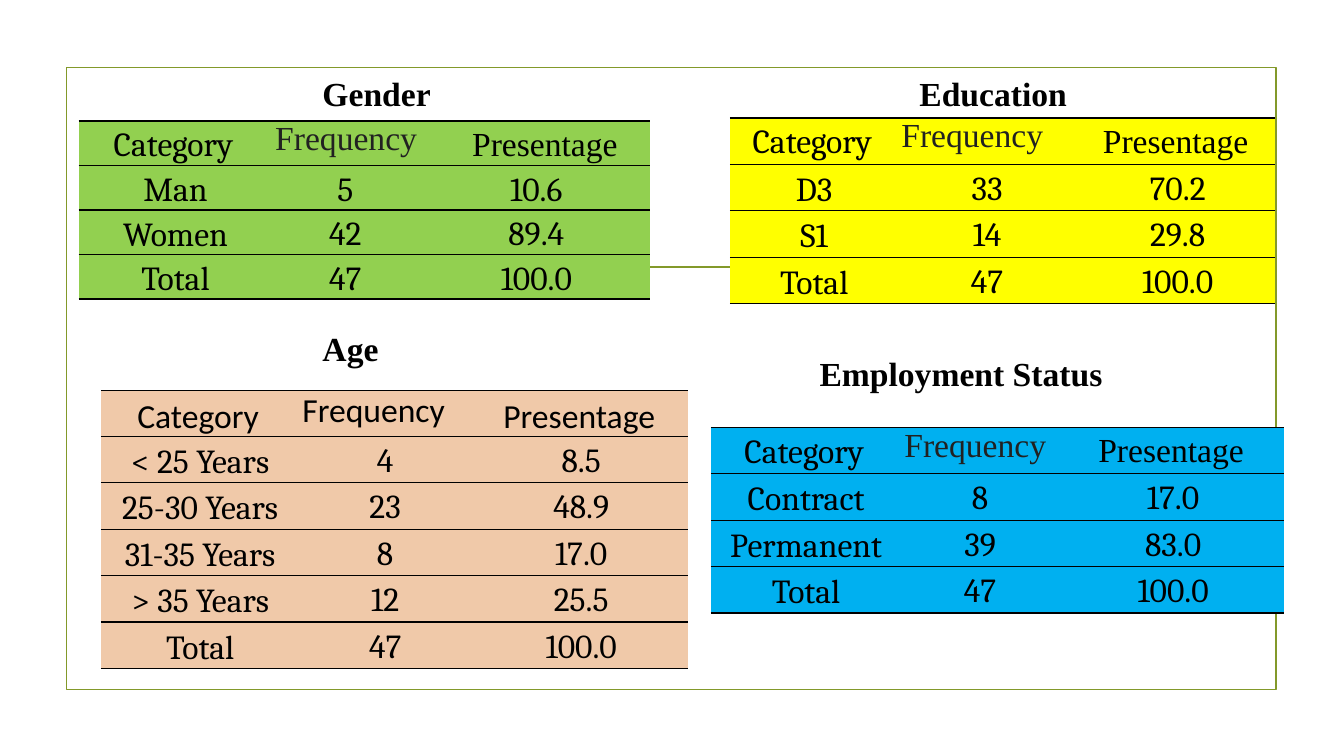
"""Build the slide of four respondent frequency tables."""
from dataclasses import dataclass

from lxml import etree
from pptx import Presentation
from pptx.dml.color import RGBColor
from pptx.enum.shapes import MSO_CONNECTOR, MSO_SHAPE
from pptx.enum.text import MSO_ANCHOR, MSO_AUTO_SIZE, PP_ALIGN
from pptx.oxml.ns import qn
from pptx.util import Pt

PX = 9144
RECT, STRAIGHT = MSO_SHAPE.RECTANGLE, MSO_CONNECTOR.STRAIGHT
CENTER, LEFT = PP_ALIGN.CENTER, PP_ALIGN.LEFT
TOP, MIDDLE = MSO_ANCHOR.TOP, MSO_ANCHOR.MIDDLE
GROW = MSO_AUTO_SIZE.SHAPE_TO_FIT_TEXT
NO_GRID_STYLE = "{2D5ABB26-0587-4C30-8999-92F81FD0307C}"
COLORS = {
    "frame": "83992A", "text": "000000", "soft": "212121",
    "green": "92D050", "yellow": "FFFF00", "peach": "F0C9A9", "blue": "00B0F0",
}
SERIF, SANS, TIMES = "Cambria", "Calibri", "Times New Roman"
HEADER = ("Category", "Frequency", "Presentage")
MIXED_HEAD = ((SERIF, "text"), (TIMES, "soft"), (TIMES, "text"))
PLAIN_HEAD = ((SANS, "text"),) * 3


@dataclass(frozen=True)
class Title:
    text: str
    x: int
    y: int
    w: int


@dataclass(frozen=True)
class FrequencyTable:
    title: Title
    x: int
    y: int
    cols: tuple[int, ...]
    heights: tuple[int, ...]
    fill: str
    rows: tuple[tuple[str, str, str], ...]
    head: tuple[tuple[str, str], ...] = MIXED_HEAD
    head_starts: tuple[int, ...] = (0, 1, 2)


TABLES = (
    FrequencyTable(
        Title("Gender", 310, 67, 128), 78, 120, (188, 149, 21, 209), (44,) * 4, "green",
        (("Man", "5", "10.6"), ("Women", "42", "89.4"), ("Total", "47", "100.0")),
        head_starts=(0, 1, 3)),
    FrequencyTable(
        Title("Age", 310, 320, 128), 100, 387, (193, 174, 215), (46,) + (44,) * 5, "peach",
        (("< 25 Years", "4", "8.5"), ("25-30 Years", "23", "48.9"),
         ("31-35 Years", "8", "17.0"), ("> 35 Years", "12", "25.5"),
         ("Total", "47", "100.0")), head=PLAIN_HEAD),
    FrequencyTable(
        Title("Education", 902, 67, 182), 724, 117, (163, 180, 198), (44,) * 4, "yellow",
        (("D3", "33", "70.2"), ("S1", "14", "29.8"), ("Total", "47", "100.0"))),
    FrequencyTable(
        Title("Employment Status", 803, 345, 353), 705, 424, (185, 160, 223), (46,) * 4, "blue",
        (("Contract", "8", "17.0"), ("Permanent", "39", "83.0"),
         ("Total", "47", "100.0"))),
)


def rgb(name: str) -> RGBColor:
    return RGBColor.from_string(COLORS[name])


def write(p, text: str, font: str, color: str = "text", bold: bool = False) -> None:
    r = p.add_run()
    r.text = text
    for key, value in {"name": font, "size": Pt(24), "bold": bold}.items():
        setattr(r.font, key, value)
    r.font.color.rgb = rgb(color)


def style_cell(cell, fill: str) -> None:
    margins = {"margin_left": 7 * PX, "margin_right": 7 * PX,
               "margin_top": 0, "margin_bottom": 0}
    for key, value in margins.items():
        setattr(cell, key, value)
    cell.fill.solid()
    cell.fill.fore_color.rgb = rgb(fill)
    tc_pr = cell._tc.get_or_add_tcPr()
    for i, side in enumerate(("a:lnT", "a:lnB")):
        ln = etree.Element(qn(side), w=str(Pt(1)))
        solid = etree.SubElement(ln, qn("a:solidFill"))
        etree.SubElement(solid, qn("a:srgbClr"), val=COLORS["text"])
        tc_pr.insert(i, ln)


def fill_row(table, row: int, values: tuple[str, ...], spec: FrequencyTable) -> None:
    is_head = row == 0
    starts = spec.head_starts if is_head else (0, 1, 2)
    ends = [nxt - 1 for nxt in starts[1:]] + [len(spec.cols) - 1]
    fonts = spec.head if is_head else ((SERIF, "text"),) * 3
    for i, (start, end) in enumerate(zip(starts, ends)):
        cell = table.cell(row, start)
        if end > start:
            cell.merge(table.cell(row, end))
        cell.vertical_anchor = MIDDLE if i == 0 and not is_head else TOP
        p = cell.text_frame.paragraphs[0]
        is_loose = is_head and i == 1
        p.alignment = LEFT if is_loose else CENTER
        p.line_spacing = 1.0 if is_loose else 1.15
        if not is_head:
            p._p.get_or_add_pPr().set("marL", str(4 * PX))
        write(p, values[i], *fonts[i])


def add_frequency_table(s, spec: FrequencyTable) -> None:
    rows = (HEADER,) + spec.rows
    sp = s.shapes.add_table(len(rows), len(spec.cols), spec.x * PX, spec.y * PX,
                            sum(spec.cols) * PX, sum(spec.heights) * PX)
    table = sp.table
    table.first_row = table.horz_banding = False
    table._tbl.tblPr.find(qn("a:tableStyleId")).text = NO_GRID_STYLE
    for col, width in zip(table.columns, spec.cols):
        col.width = width * PX
    for row, height in zip(table.rows, spec.heights):
        row.height = height * PX
    for cell in table.iter_cells():
        style_cell(cell, spec.fill)
    for i, values in enumerate(rows):
        fill_row(table, i, values, spec)


def add_title(s, title: Title) -> None:
    sp = s.shapes.add_textbox(title.x * PX, title.y * PX, title.w * PX, 50 * PX)
    tf = sp.text_frame
    tf.word_wrap = True
    tf.auto_size = GROW
    write(tf.paragraphs[0], title.text, TIMES, bold=True)


def add_frame(s) -> None:
    sp = s.shapes.add_shape(RECT, 66 * PX, 67 * PX, 1200 * PX, 617 * PX)
    sp.shadow.inherit = False
    sp.fill.background()
    rule = s.shapes.add_connector(STRAIGHT, 153 * PX, 265 * PX, 1181 * PX, 265 * PX)
    etree.SubElement(rule._element.spPr, qn("a:effectLst"))
    for outlined in (sp, rule):
        outlined.line.color.rgb = rgb("frame")
        outlined.line.width = Pt(1.25)


def main() -> None:
    prs = Presentation()
    prs.slide_width, prs.slide_height = 1333 * PX, 750 * PX
    s = prs.slides.add_slide(prs.slide_layouts[6])
    add_frame(s)
    for spec in TABLES:
        add_frequency_table(s, spec)
        add_title(s, spec.title)
    prs.save("out.pptx")


if __name__ == "__main__":
    main()
